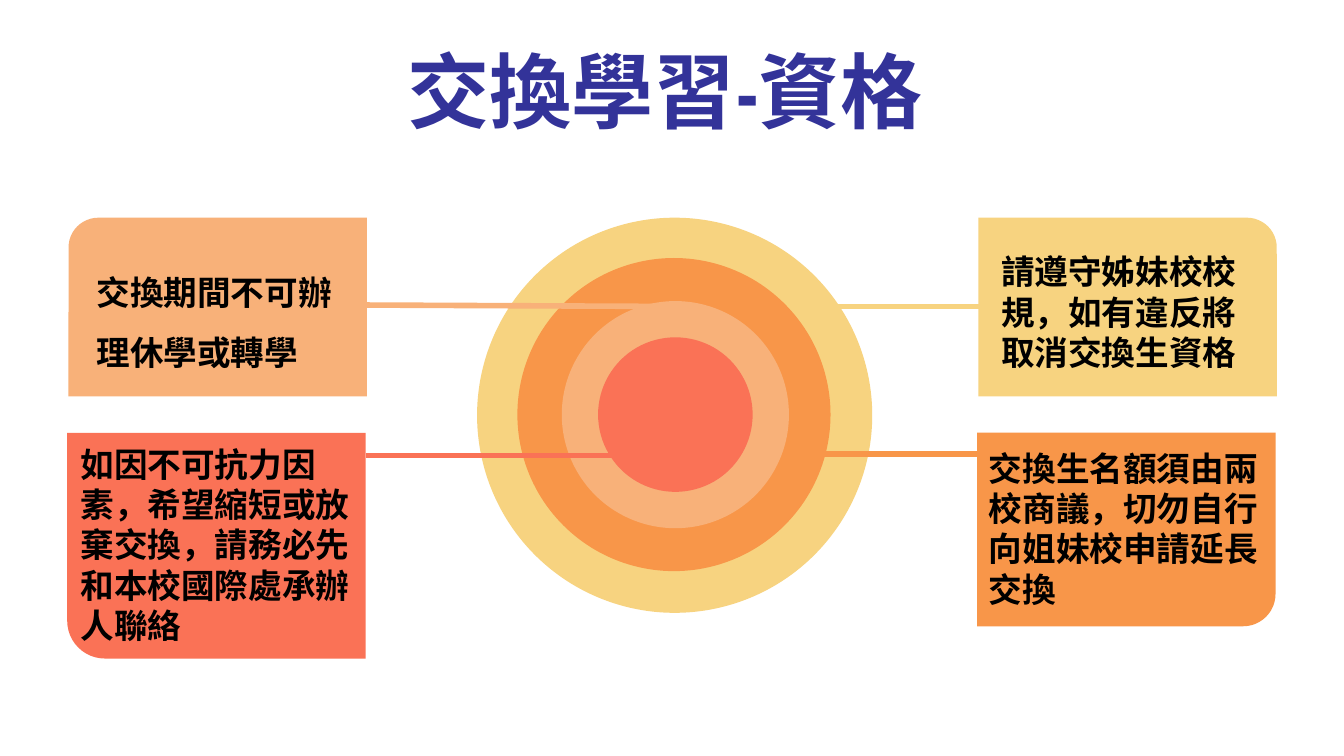
from lxml import etree
from pptx import Presentation
from pptx import util as u
from pptx.dml.color import RGBColor
from pptx.enum import shapes, text
from pptx.oxml.ns import qn

YELLOW = RGBColor(0xF7, 0xD3, 0x80)
ORANGE = RGBColor(0xF8, 0x96, 0x49)
PEACH = RGBColor(0xF8, 0xB1, 0x79)
CORAL = RGBColor(0xFA, 0x72, 0x56)
INDIGO = RGBColor(0x33, 0x33, 0x99)
BLACK = RGBColor(0, 0, 0)
CJK_FONT = "Noto Sans CJK SC"


class SlideBuilder:
    def __init__(self, deck):
        self.slide = deck.slides.add_slide(deck.slide_layouts[6])
        self.inset = u.Inches(0.1)
        self.line_width = u.Pt(3)

    def shape(self, kind, area, color):
        shape = self.slide.shapes.add_shape(kind, *map(u.Inches, area))
        shape.shadow.inherit = False
        shape.fill.solid()
        shape.fill.fore_color.rgb = color
        shape.line.fill.background()
        return shape

    def ring(self, left, top, size, color):
        self.shape(shapes.MSO_SHAPE.OVAL, (left, top, size, size), color)

    def card(self, area, color, rotation, mirrored):
        card = self.shape(shapes.MSO_SHAPE.ROUND_1_RECTANGLE, area, color)
        card.adjustments[0] = 0.167
        card.rotation = rotation
        if mirrored:
            card.element.spPr.get_or_add_xfrm().set("flipH", "1")

    def text(self, area, runs, size=18, color=BLACK, spacing=None,
             align=text.PP_ALIGN.LEFT, anchor=text.MSO_ANCHOR.TOP):
        box = self.slide.shapes.add_textbox(*map(u.Inches, area))
        frame = box.text_frame
        frame.word_wrap = True
        frame.vertical_anchor = anchor
        frame.margin_left = frame.margin_right = self.inset
        frame.margin_top = frame.margin_bottom = self.inset
        para = frame.paragraphs[0]
        para.alignment = align
        para._p.get_or_add_pPr().set("hangingPunct", "0")
        if spacing:
            para.line_spacing = spacing
        for words, font in runs:
            span = para.add_run()
            span.text = words
            span.font.name = font
            span.font.size = u.Pt(size)
            span.font.bold = True
            span.font.color.rgb = color
            east_asian = etree.SubElement(span.font._element, qn("a:ea"))
            east_asian.set("typeface", CJK_FONT)

    def line(self, start, end, color):
        line = self.slide.shapes.add_connector(
            shapes.MSO_CONNECTOR.STRAIGHT, *map(u.Inches, start + end))
        line.line.color.rgb = color
        line.line.width = self.line_width
        etree.SubElement(line.element.spPr, qn("a:effectLst"))


def main():
    deck = Presentation()
    deck.slide_width = u.Inches(10)
    deck.slide_height = u.Inches(10 * 9 / 16)
    builder = SlideBuilder(deck)

    rings = [
        (3.55, 1.62, 2.94, YELLOW),
        (3.85, 1.92, 2.33, ORANGE),
        (4.18, 2.24, 1.69, PEACH),
        (4.45, 2.51, 1.15, CORAL),
    ]
    for ring in rings:
        builder.ring(*ring)

    builder.text(
        (0.45, 0.49, 9, 0.64),
        [("交換", "Arial"), ("學習-", "Arial Narrow"), ("資格", "Arial")],
        size=44, color=INDIGO, align=text.PP_ALIGN.CENTER,
        anchor=text.MSO_ANCHOR.BOTTOM)

    cards = [
        ((7.27, 3.22, 2.22, 1.44), ORANGE, 180, True),
        ((7.28, 1.62, 2.22, 1.33), YELLOW, 0, False),
        ((0.51, 1.62, 2.22, 1.33), PEACH, 0, True),
        ((0.5, 3.22, 2.22, 1.68), CORAL, 180, False),
    ]
    for card in cards:
        builder.card(*card)

    rules = [
        ((0.62, 1.77, 2.01, 0.7), "交換期間不可辦理休學或轉學", 1.5),
        ((0.5, 3.2, 2.22, 1.46),
         "如因不可抗力因素，希望縮短或放棄交換，請務必先和本校國際處承辦人聯絡", None),
        ((7.35, 1.77, 2.05, 1.09),
         "請遵守姊妹校校規，如有違反將取消交換生資格", None),
        ((7.26, 3.23, 2.22, 1.15),
         "交換生名額須由兩校商議，切勿自行向姐妹校申請延長交換", None),
    ]
    for area, words, spacing in rules:
        builder.text(area, [(words, CJK_FONT)], spacing=spacing)

    lines = [
        ((2.72, 2.27), (4.92, 2.28), PEACH),
        ((2.72, 3.39), (4.61, 3.39), CORAL),
        ((6.2, 2.28), (7.39, 2.28), YELLOW),
        ((6.07, 3.38), (7.35, 3.38), ORANGE),
    ]
    for line in lines:
        builder.line(*line)

    deck.save("out.pptx")


if __name__ == "__main__":
    main()
